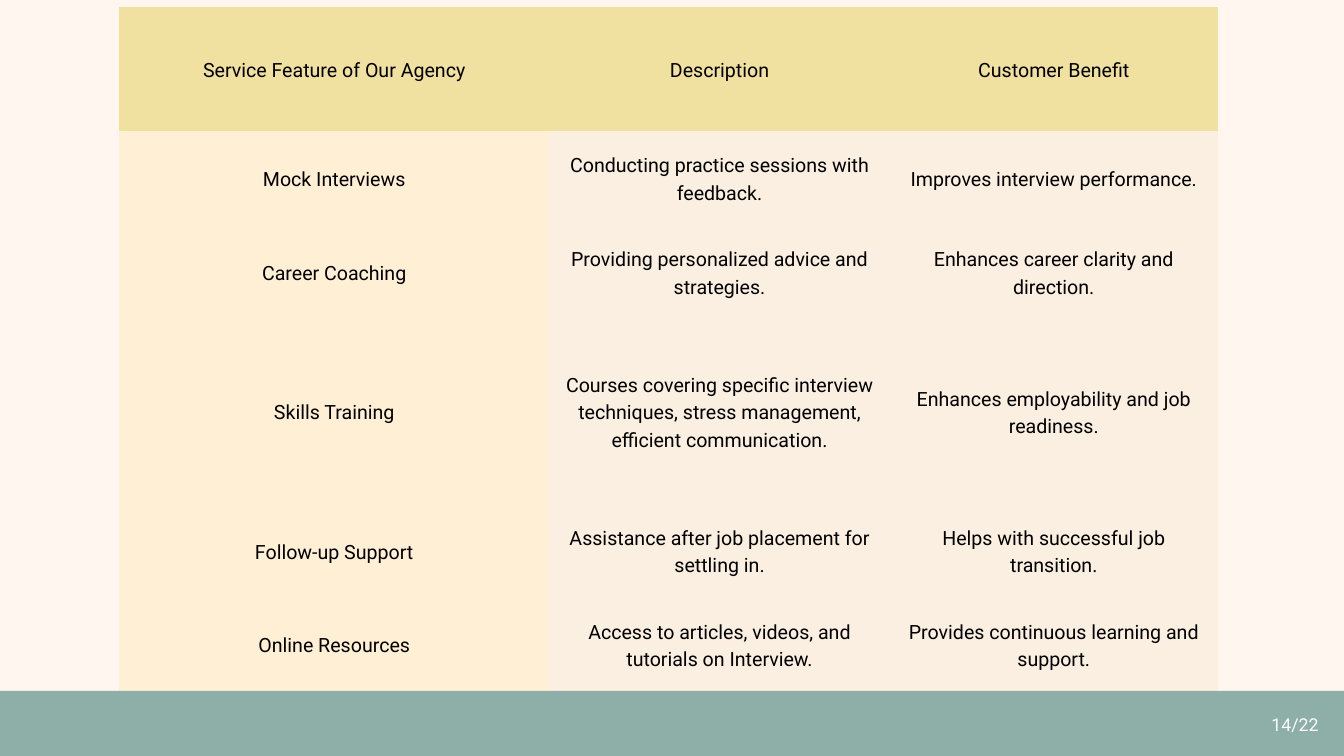
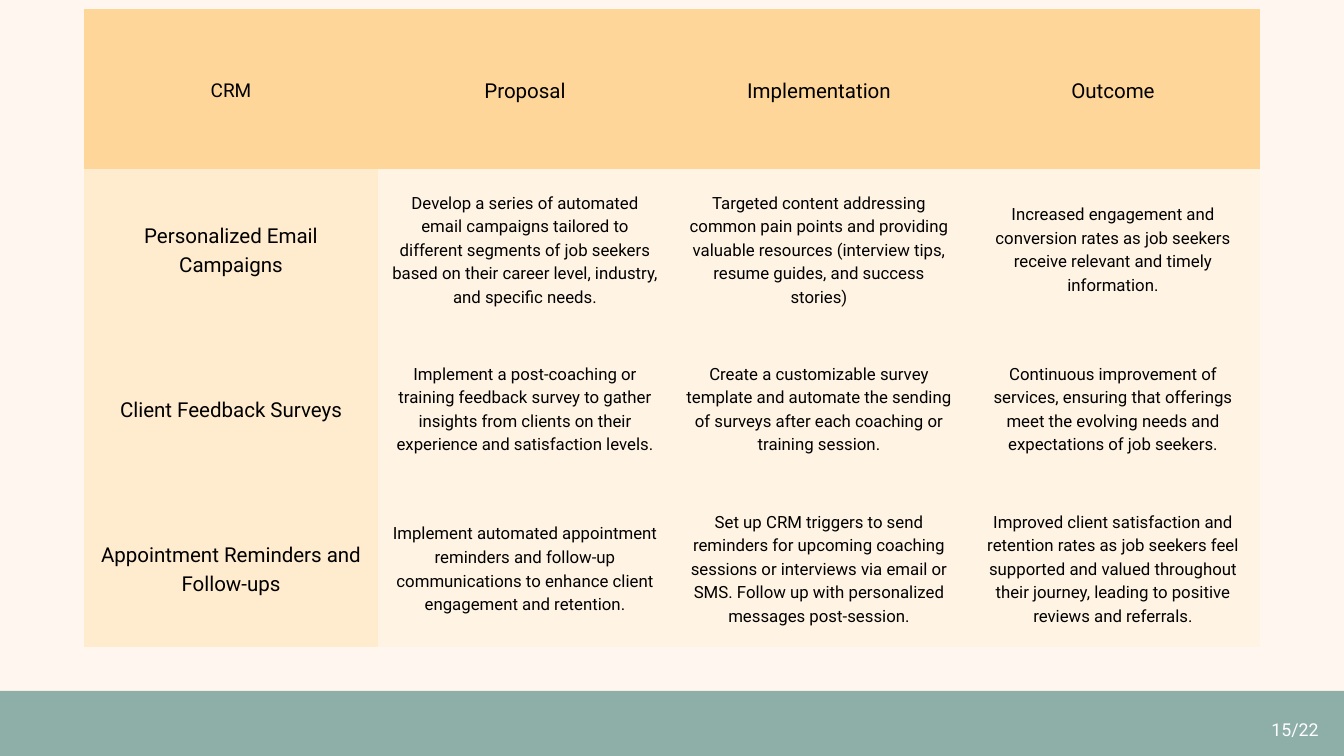
"""Build two table slides on service features and client relations."""
from pptx import Presentation
from pptx.dml.color import RGBColor
from pptx.enum.shapes import MSO_SHAPE
from pptx.enum.text import MSO_ANCHOR, MSO_AUTO_SIZE, PP_ALIGN
from pptx.oxml.ns import qn
from pptx.util import Emu, Pt

FONT = "Roboto"
LEADING = 1.4
CELL_MARGIN = 20
NO_STYLE_NO_GRID = "{2D5ABB26-0587-4C30-8999-92F81FD0307C}"

CREAM = RGBColor(0xFF, 0xF7, 0xEF)
SAGE = RGBColor(0x8D, 0xAF, 0xA8)
BLACK = RGBColor(0x00, 0x00, 0x00)
WHITE = RGBColor(0xFF, 0xFF, 0xFF)
KHAKI = RGBColor(0xF1, 0xE1, 0xA1)
VANILLA = RGBColor(0xFF, 0xEF, 0xD4)
LINEN = RGBColor(0xFA, 0xEF, 0xE0)
APRICOT = RGBColor(0xFF, 0xD6, 0x99)
PEACH = RGBColor(0xFF, 0xEB, 0xCD)
IVORY = RGBColor(0xFF, 0xF4, 0xE3)

SERVICES = [
    ("Service Feature of Our Agency", "Description", "Customer Benefit"),
    ("Mock Interviews",
     "Conducting practice sessions with feedback.",
     "Improves interview performance."),
    ("Career Coaching",
     "Providing personalized advice and strategies.",
     "Enhances career clarity and direction."),
    ("Skills Training",
     "Courses covering specific interview techniques, stress management, "
     "efficient communication.",
     "Enhances employability and job readiness."),
    ("Follow-up Support",
     "Assistance after job placement for settling in.",
     "Helps with successful job transition."),
    ("Online Resources",
     "Access to articles, videos, and tutorials on Interview.",
     "Provides continuous learning and support."),
]

CRM = [
    ("CRM", "Proposal", "Implementation", "Outcome"),
    ("Personalized Email Campaigns",
     "Develop a series of automated email campaigns tailored to different segments "
     "of job seekers based on their career level, industry, and specific needs.",
     "Targeted content addressing common pain points and providing valuable "
     "resources (interview tips, resume guides, and success stories)",
     "Increased engagement and conversion rates as job seekers receive relevant "
     "and timely information."),
    ("Client Feedback Surveys",
     "Implement a post-coaching or training feedback survey to gather insights "
     "from clients on their experience and satisfaction levels.",
     "Create a customizable survey template and automate the sending of surveys "
     "after each coaching or training session.",
     "Continuous improvement of services, ensuring that offerings meet the "
     "evolving needs and expectations of job seekers."),
    ("Appointment Reminders and Follow-ups",
     "Implement automated appointment reminders and follow-up communications to "
     "enhance client engagement and retention.",
     "Set up CRM triggers to send reminders for upcoming coaching sessions or "
     "interviews via email or SMS. Follow up with personalized messages "
     "post-session.",
     "Improved client satisfaction and retention rates as job seekers feel "
     "supported and valued throughout their journey, leading to positive reviews "
     "and referrals."),
]

SLIDES = [
    dict(rows=SERVICES, left=170, top=10, widths=[615, 486, 469],
         heights=[177, 134, 134, 264, 134, 134],
         fills=dict(corner=KHAKI, header=KHAKI, label=VANILLA, body=LINEN),
         sizes=dict(corner=21, header=21, label=21, body=21),
         page="14/22", page_top=1014),
    dict(rows=CRM, left=120, top=13, widths=[420] * 4, heights=[228] * 4,
         fills=dict(corner=APRICOT, header=APRICOT, label=PEACH, body=IVORY),
         sizes=dict(corner=20.4, header=22, label=22, body=18),
         page="15/22", page_top=1022),
]


def px(n):
    return Emu(n * 9525)


def set_text(tf, text, size, color):
    tf.text = text
    tf.word_wrap = True
    p = tf.paragraphs[0]
    p.alignment = PP_ALIGN.CENTER
    p.line_spacing = Pt(size * LEADING)
    font = p.runs[0].font
    font.name, font.size, font.color.rgb = FONT, Pt(size), color


def cell_role(i, j):
    if i == 0:
        return "header" if j else "corner"
    return "body" if j else "label"


def add_grid(s, rows, left, top, widths, heights, fills, sizes):
    frame = s.shapes.add_table(len(rows), len(widths), px(left), px(top),
                               px(sum(widths)), px(sum(heights)))
    frame.element.find(".//" + qn("a:tableStyleId")).text = NO_STYLE_NO_GRID
    table = frame.table
    table.first_row = table.horz_banding = False
    for column, width in zip(table.columns, widths):
        column.width = px(width)
    for i, (row, height) in enumerate(zip(rows, heights)):
        table.rows[i].height = px(height)
        for j, text in enumerate(row):
            role = cell_role(i, j)
            cell = table.cell(i, j)
            cell.fill.solid()
            cell.fill.fore_color.rgb = fills[role]
            cell.vertical_anchor = MSO_ANCHOR.MIDDLE
            cell.margin_left = cell.margin_right = px(CELL_MARGIN)
            cell.margin_top = cell.margin_bottom = px(CELL_MARGIN)
            set_text(cell.text_frame, text, sizes[role], BLACK)


def add_footer(s, page, page_top):
    band = s.shapes.add_shape(MSO_SHAPE.RECTANGLE, px(-59), px(987), px(2037), px(187))
    band.shadow.inherit = False
    band.fill.solid()
    band.fill.fore_color.rgb = SAGE
    band.line.fill.background()
    tf = s.shapes.add_textbox(px(1812), px(page_top), px(76), px(35)).text_frame
    tf.margin_left = tf.margin_right = tf.margin_top = tf.margin_bottom = 0
    tf.auto_size = MSO_AUTO_SIZE.SHAPE_TO_FIT_TEXT
    set_text(tf, page, 19, WHITE)


def main():
    prs = Presentation()
    prs.slide_width, prs.slide_height = px(1920), px(1080)
    for slide in SLIDES:
        s = prs.slides.add_slide(prs.slide_layouts[6])
        s.background.fill.solid()
        s.background.fill.fore_color.rgb = CREAM
        grid = dict(slide)
        page, page_top = grid.pop("page"), grid.pop("page_top")
        add_grid(s, **grid)
        add_footer(s, page, page_top)
    prs.save("out.pptx")


if __name__ == "__main__":
    main()
